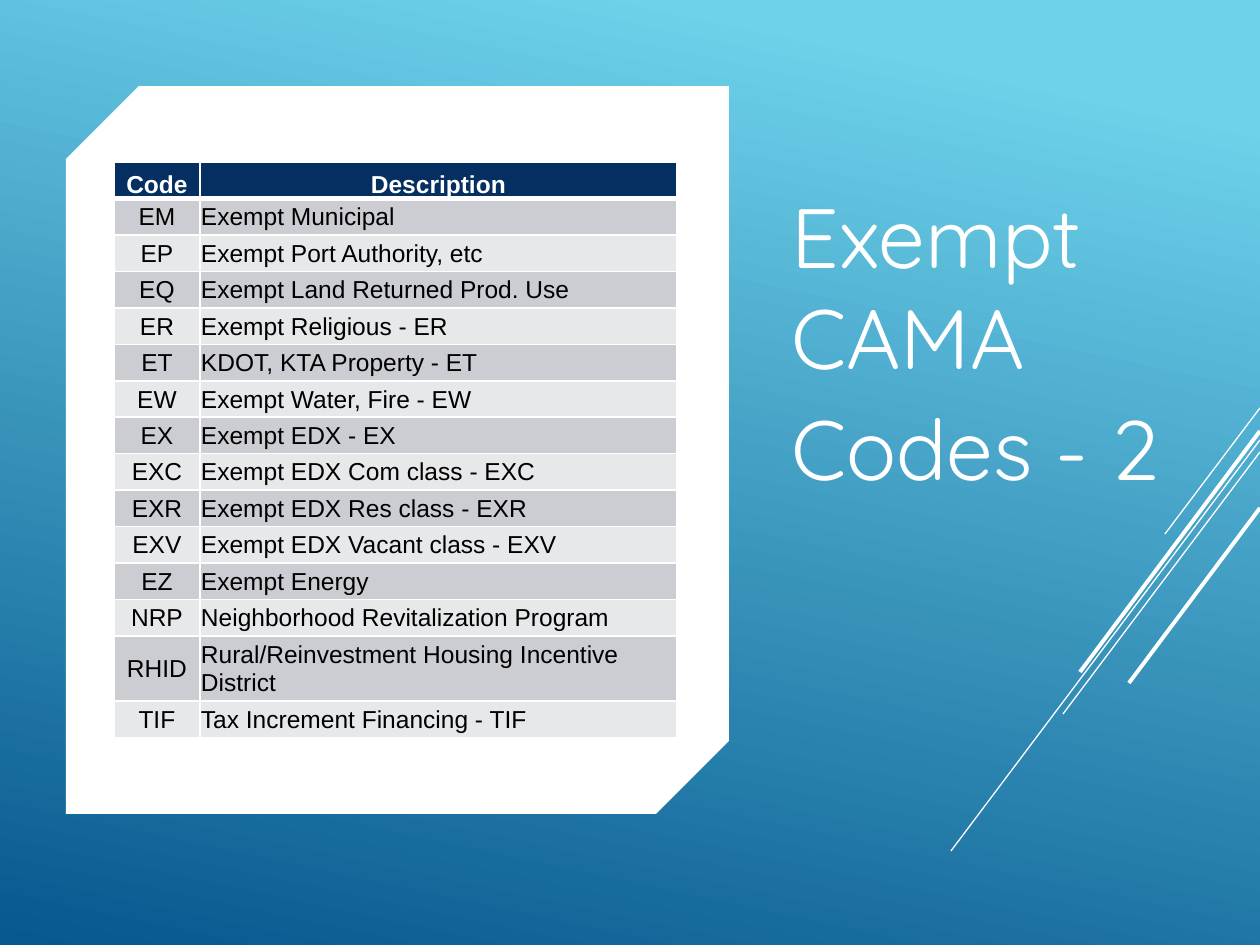
from dataclasses import dataclass

from pptx import Presentation
from pptx.dml.color import RGBColor
from pptx.enum.shapes import MSO_CONNECTOR, MSO_SHAPE
from pptx.enum.text import MSO_ANCHOR as ANCHOR, PP_ALIGN as ALIGN
from pptx.oxml import parse_xml
from pptx.oxml.ns import nsdecls, qn
from pptx.util import Emu, Pt
from lxml.etree import SubElement


@dataclass
class Theme:
    white: str = "FFFFFF"
    black: str = "000000"
    sky: str = "6ED2EB"
    deep: str = "06588E"
    navy: str = "052F61"
    bands: tuple = ("CCCDD2", "E7E8EA")
    title_font: str = "Quicksand"
    body_font: str = "Arial"
    title_size: int = 48
    body_size: int = 14


theme = Theme()
PX = 914400 // 126


def px(*values):
    return [Emu(round(v * PX)) for v in values]


def add_run(p, text, font, size, color, bold=False):
    r = p.add_run()
    r.text = text
    r.font.name, r.font.size, r.font.bold = font, Pt(size), bold
    r.font.color.rgb = RGBColor.from_string(color)


prs = Presentation()
prs.slide_width, prs.slide_height = px(1260, 945)
s = prs.slides.add_slide(prs.slide_layouts[6])

# Gradient backdrop
sp = s.shapes.add_shape(MSO_SHAPE.RECTANGLE, *px(0, 0, 1260, 945))
sp.shadow.inherit = False
sp.line.fill.background()
sp.fill.gradient()
sp.fill.gradient_angle = 360 - 102
for stop, position, color in zip(sp.fill.gradient_stops, (0.1, 1), (theme.sky, theme.deep)):
    stop.position = position
    stop.color.rgb = RGBColor.from_string(color)

# Title
tf = s.shapes.add_textbox(*px(779, 87, 426, 417)).text_frame
tf.word_wrap = True
tf.vertical_anchor = ANCHOR.BOTTOM
for i, text in enumerate(("Exempt CAMA", "Codes - 2")):
    p = tf.add_paragraph() if i else tf.paragraphs[0]
    p.space_after = Pt(6)
    add_run(p, text, theme.title_font, theme.title_size, theme.white)

# White panel with two snipped corners
sp = s.shapes.add_shape(MSO_SHAPE.SNIP_2_DIAG_RECTANGLE, *px(66, 86, 663, 728))
sp.adjustments[0], sp.adjustments[1] = 0.11, 0
sp.shadow.inherit = False
sp.fill.solid()
sp.fill.fore_color.rgb = RGBColor.from_string(theme.white)
sp.line.fill.background()

# Diagonal lines running off the right edge: start y, end x, end y, width
for y1, x2, y2, width in (
    (408, 1165, 534, 0.75),
    (440, 951, 851, 0.75),
    (452, 1063, 714, 0.75),
    (431, 1080, 672, 2.25),
    (508, 1129, 683, 2.25),
):
    line = s.shapes.add_connector(MSO_CONNECTOR.STRAIGHT, *px(1260, y1, x2, y2))
    line.line.color.rgb = RGBColor.from_string(theme.white)
    line.line.width = Pt(width)
    SubElement(line._element.spPr, qn("a:effectLst"))

# Code table
rows = (
    ("Code", "Description"),
    ("EM", "Exempt Municipal"),
    ("EP", "Exempt Port Authority, etc"),
    ("EQ", "Exempt Land Returned Prod. Use"),
    ("ER", "Exempt Religious - ER"),
    ("ET", "KDOT, KTA Property - ET"),
    ("EW", "Exempt Water, Fire - EW"),
    ("EX", "Exempt EDX - EX"),
    ("EXC", "Exempt EDX Com class - EXC"),
    ("EXR", "Exempt EDX Res class - EXR"),
    ("EXV", "Exempt EDX Vacant class - EXV"),
    ("EZ", "Exempt Energy"),
    ("NRP", "Neighborhood Revitalization Program"),
    ("RHID", "Rural/Reinvestment Housing Incentive District"),
    ("TIF", "Tax Increment Financing - TIF"),
)
height, tall = 576, 65
regular = (height - tall) / (len(rows) - 1)
table = s.shapes.add_table(len(rows), 2, *px(114, 162, 563, height)).table
table.columns[0].width, table.columns[1].width = px(86, 477)

for i, row in enumerate(rows):
    table.rows[i].height = px(tall if row[0] == "RHID" else regular)[0]
    header = i == 0
    for j, text in enumerate(row):
        cell = table.cell(i, j)
        cell.margin_left, cell.margin_right, cell.margin_top, cell.margin_bottom = px(1, 1, 1, 0)
        cell.vertical_anchor = ANCHOR.BOTTOM if header else ANCHOR.MIDDLE

        # Thin borders, with a thick rule under the header
        for side in "LRTB":
            thick = (i, side) in ((0, "B"), (1, "T"))
            cell._tc.get_or_add_tcPr().append(parse_xml(
                f'<a:ln{side} {nsdecls("a")} w="{Pt(3 if thick else 1)}"><a:solidFill>'
                f'<a:srgbClr val="{theme.white}"/></a:solidFill></a:ln{side}>'))
        cell.fill.solid()
        cell.fill.fore_color.rgb = RGBColor.from_string(
            theme.navy if header else theme.bands[(i - 1) % 2])

        p = cell.text_frame.paragraphs[0]
        p.alignment = ALIGN.CENTER if header or j == 0 else ALIGN.LEFT
        add_run(p, text, theme.body_font, theme.body_size,
                theme.white if header else theme.black, header)

prs.save("out.pptx")
